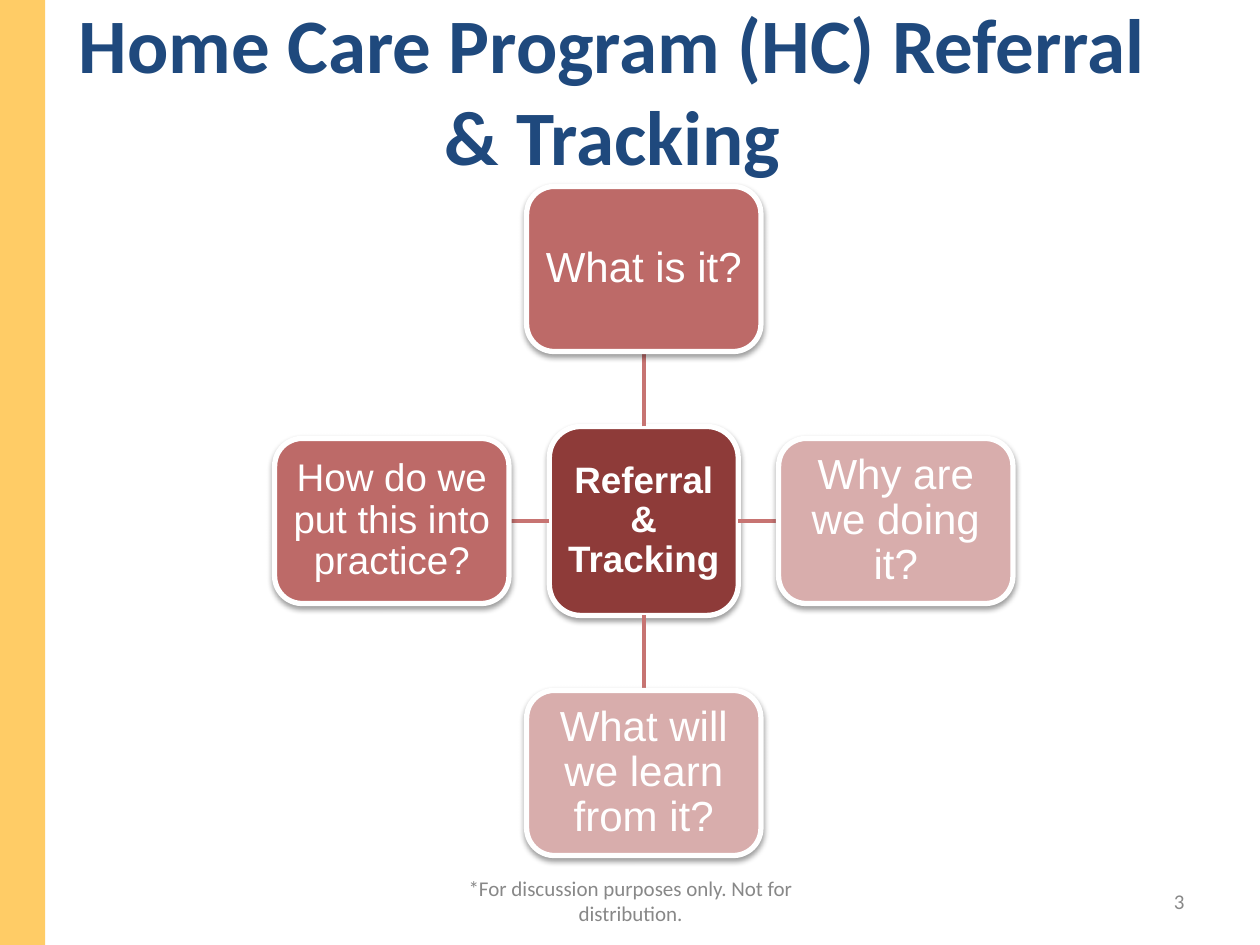
from lxml.etree import SubElement
from pptx import Presentation
from pptx.dml.color import RGBColor
from pptx.enum.shapes import MSO_CONNECTOR, MSO_SHAPE
from pptx.enum.text import MSO_ANCHOR, MSO_AUTO_SIZE, PP_ALIGN
from pptx.oxml.ns import qn
from pptx.util import Inches, Pt

NAVY = RGBColor(0x1F, 0x49, 0x7D)
YELLOW = RGBColor(0xFF, 0xCC, 0x66)
GREY = RGBColor(0x88, 0x88, 0x88)
WHITE = RGBColor(0xFF, 0xFF, 0xFF)
DARK_RED = RGBColor(0x8E, 0x3B, 0x39)
RED = RGBColor(0xBD, 0x6A, 0x68)
PALE_RED = RGBColor(0xD8, 0xAD, 0xAC)
LINK_RED = RGBColor(0xC7, 0x74, 0x72)

HUB_SIZE = 1.5
NODE_WIDTH, NODE_HEIGHT = 1.86, 1.31
REACH = 2.0  # from the hub centre to each node centre

# Text, size, fill, direction from the hub (x, y)
NODES = [
    ("What is it?", 24, RED, (0, -1)),
    ("Why are we doing it?", 24, PALE_RED, (1, 0)),
    ("What will we learn from it?", 24, PALE_RED, (0, 1)),
    ("How do we put this into practice?", 22, RED, (-1, 0)),
]


def write_text(shape, text, color, alignment=PP_ALIGN.CENTER, spacing=None, **font_format):
    frame = shape.text_frame
    frame.word_wrap = True
    frame.auto_size = MSO_AUTO_SIZE.NONE
    frame.vertical_anchor = MSO_ANCHOR.MIDDLE
    frame.text = text
    paragraph = frame.paragraphs[0]
    paragraph.alignment = alignment
    paragraph.line_spacing = spacing
    font = paragraph.runs[0].font
    font.color.rgb = color
    for name, value in font_format.items():
        setattr(font, name, value)


def add_title(slide, left, top, width, height):
    title = slide.shapes.title
    box = {"left": left, "top": top, "width": width, "height": height}
    for name, value in box.items():
        setattr(title, name, Inches(value))
    write_text(title, "Home Care Program (HC) Referral & Tracking", NAVY,
               name="Calibri", size=Pt(44), bold=True)


def add_side_band(slide, left, top, width, height):
    band = slide.shapes.add_shape(
        MSO_SHAPE.RECTANGLE, Inches(left), Inches(top), Inches(width), Inches(height))
    band.shadow.inherit = False
    band.fill.solid()
    band.fill.fore_color.rgb = YELLOW
    band.line.fill.background()


def add_footer_text(slide, text, alignment, left, top, width, height):
    box = slide.shapes.add_textbox(
        Inches(left), Inches(top), Inches(width), Inches(height))
    write_text(box, text, GREY, alignment, name="Calibri", size=Pt(12))


def add_soft_shadow(shape):
    shape.shadow.inherit = False
    effects = shape._element.spPr.find(qn("a:effectLst"))
    shadow = SubElement(effects, qn("a:outerShdw"), blurRad="40000", dist="20000",
                        dir="5400000", rotWithShape="0")
    color = SubElement(shadow, qn("a:srgbClr"), val="000000")
    SubElement(color, qn("a:alpha"), val="38000")


def add_node(slide, text, size, fill, center, width, height, bold=False):
    x, y = center
    node = slide.shapes.add_shape(
        MSO_SHAPE.ROUNDED_RECTANGLE, Inches(x - width / 2), Inches(y - height / 2),
        Inches(width), Inches(height))
    node.fill.solid()
    node.fill.fore_color.rgb = fill
    node.line.color.rgb = WHITE
    node.line.width = Pt(3)
    add_soft_shadow(node)
    for side in ("left", "top", "right", "bottom"):
        setattr(node.text_frame, f"margin_{side}", Inches(0.06))
    write_text(node, text, WHITE, spacing=0.9, name="Arial", size=Pt(size), bold=bold)


def add_link(slide, start, end):
    link = slide.shapes.add_connector(
        MSO_CONNECTOR.STRAIGHT, *(Inches(value) for value in (*start, *end)))
    link.line.color.rgb = LINK_RED
    link.line.width = Pt(2)
    SubElement(link._element.spPr, qn("a:effectLst"))


def add_radial_diagram(slide, left, top, width, height):
    x, y = left + width / 2, top + height / 2
    add_node(slide, "Referral & Tracking", 21, DARK_RED, (x, y),
             HUB_SIZE, HUB_SIZE, bold=True)
    for text, size, fill, (dx, dy) in NODES:
        # Each link runs from the hub edge to the facing node edge
        inner = HUB_SIZE / 2
        outer = REACH - (NODE_WIDTH if dx else NODE_HEIGHT) / 2
        add_link(slide, (x + dx * inner, y + dy * inner),
                 (x + dx * outer, y + dy * outer))
        add_node(slide, text, size, fill, (x + dx * REACH, y + dy * REACH),
                 NODE_WIDTH, NODE_HEIGHT)


def main():
    presentation = Presentation()
    presentation.slide_width = Inches(10)
    presentation.slide_height = Inches(7.5)
    slide = presentation.slides.add_slide(presentation.slide_layouts[5])

    add_title(slide, 0.36, 0.15, 9, 1.11)
    add_side_band(slide, 0, 0, 0.36, 7.5)
    add_footer_text(slide, "*For discussion purposes only. Not for distribution.",
                    PP_ALIGN.CENTER, 3.42, 6.95, 3.17, 0.4)
    add_footer_text(slide, "3", PP_ALIGN.RIGHT, 7.17, 6.95, 2.33, 0.4)
    add_radial_diagram(slide, 2.18, 1.48, 5.86, 5.31)

    presentation.save("out.pptx")


if __name__ == "__main__":
    main()
